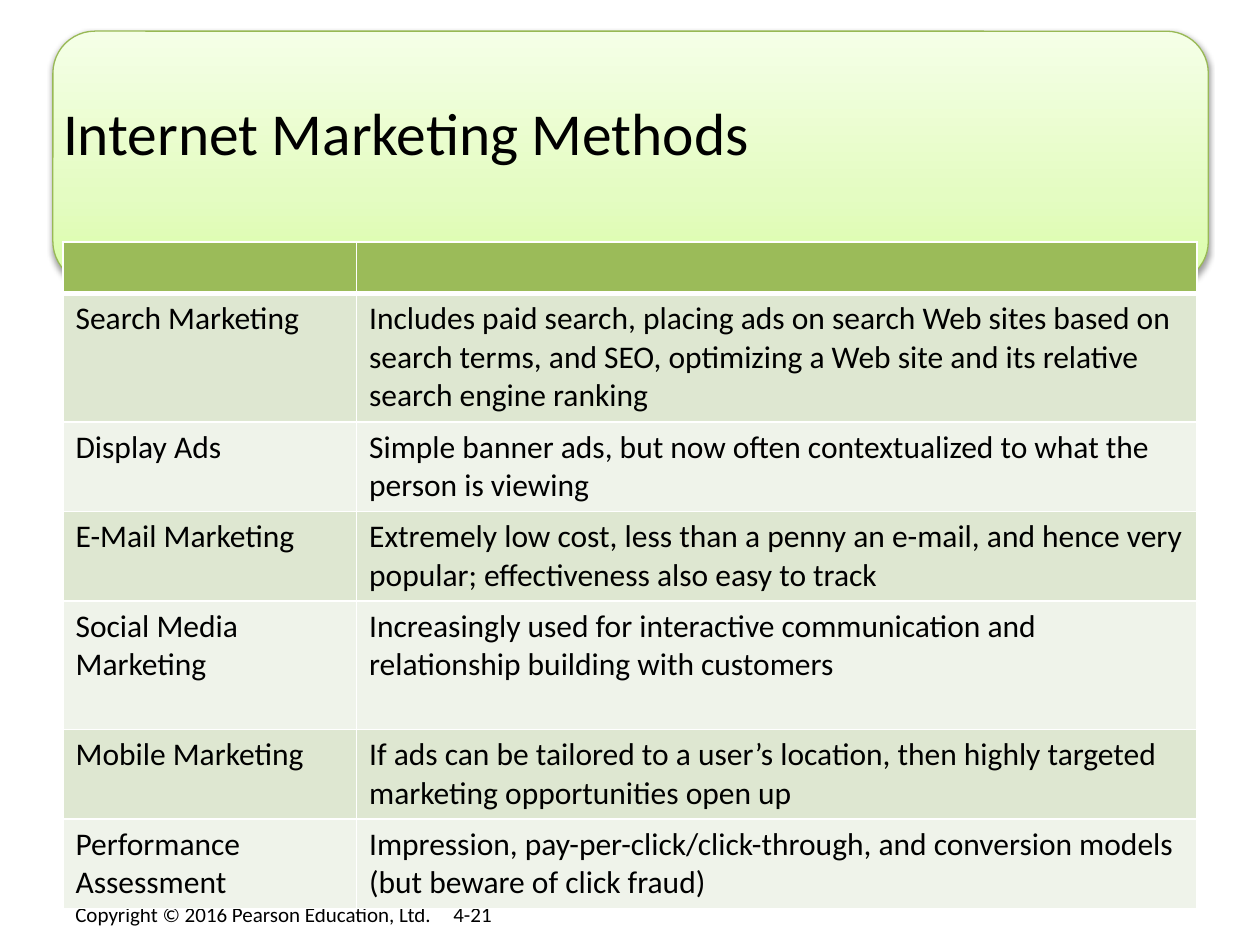
from lxml.etree import SubElement
from pptx import Presentation
from pptx.dml.color import RGBColor
from pptx.enum.shapes import MSO_SHAPE as Shape
from pptx.enum.text import MSO_ANCHOR as Anchor, MSO_AUTO_SIZE as AutoSize, PP_ALIGN as Align
from pptx.oxml import parse_xml
from pptx.oxml.ns import nsdecls, qn
from pptx.util import Inches, Pt

WIDTH, HEIGHT = 10, 7.5
MARGIN, CONTENT = 0.05, 0.9  # shares of the slide width
COLORS = {
    "text": "000000", "white": "FFFFFF", "shadow": "000000",
    "panel_line": "98B955", "panel_low": "DAFDA7",
    "panel_mid": "E4FCC2", "panel_high": "F5FFE7",
    "header": "9BBB59", "odd_row": "DEE7D1", "even_row": "EFF3EA",
}
METHODS = [
    ("Search Marketing",
     "Includes paid search, placing ads on search Web sites based on search terms, "
     "and SEO, optimizing a Web site and its relative search engine ranking"),
    ("Display Ads",
     "Simple banner ads, but now often contextualized to what the person is viewing"),
    ("E-Mail Marketing",
     "Extremely low cost, less than a penny an e-mail, and hence very popular; "
     "effectiveness also easy to track"),
    ("Social Media Marketing",
     "Increasingly used for interactive communication and relationship building "
     "with customers"),
    ("Mobile Marketing",
     "If ads can be tailored to a user’s location, then highly targeted marketing "
     "opportunities open up"),
    ("Performance Assessment",
     "Impression, pay-per-click/click-through, and conversion models "
     "(but beware of click fraud)"),
]
HEADER_HEIGHT, TWO_LINES, THREE_LINES = 0.41, 0.71, 1.02
ROW_HEIGHTS = [HEADER_HEIGHT, THREE_LINES, TWO_LINES, TWO_LINES,
               THREE_LINES, TWO_LINES, TWO_LINES]


def rgb(name):
    return RGBColor.from_string(COLORS[name])


def box(left, top, width, height):
    """Turn shares of the slide's size into lengths."""
    return (Inches(left * WIDTH), Inches(top * HEIGHT),
            Inches(width * WIDTH), Inches(height * HEIGHT))


def write(frame, text, size=18, color="text", anchor=None, inset=None, tab=None):
    frame.word_wrap = True
    if anchor is not None:
        frame.vertical_anchor = anchor
    if inset is not None:
        frame.margin_left = frame.margin_right = inset
        frame.margin_top = frame.margin_bottom = inset
    paragraph = frame.paragraphs[0]
    paragraph.alignment = Align.LEFT
    if tab:
        stops = SubElement(paragraph._p.get_or_add_pPr(), qn("a:tabLst"))
        SubElement(stops, qn("a:tab"), pos=str(Inches(tab)), algn="l")
    run = paragraph.add_run()
    run.text = text
    run.font.name, run.font.size = "Calibri", Pt(size)
    run.font.color.rgb = rgb(color)


def add_copyright(slide):
    line = slide.shapes.add_textbox(*box(MARGIN, 0.948, CONTENT, 0.04))
    write(line.text_frame, "Copyright © 2016 Pearson Education, Ltd. \t4-21",
          size=12, tab=3)


def add_title_panel(slide):
    panel = slide.shapes.add_shape(Shape.ROUNDED_RECTANGLE,
                                   *box(0.042, 0.033, 0.917, 0.267))
    panel.line.color.rgb, panel.line.width = rgb("panel_line"), Pt(0.75)
    # Gradient rising from the bottom edge, and a soft shadow below
    stops = "".join(
        f'<a:gs pos="{share * 1000}"><a:srgbClr val="{COLORS[name]}"/></a:gs>'
        for share, name in [(0, "panel_low"), (35, "panel_mid"), (100, "panel_high")])
    gradient = parse_xml(
        f'<a:gradFill {nsdecls("a")} rotWithShape="1"><a:gsLst>{stops}</a:gsLst>'
        '<a:lin ang="16200000" scaled="0"/></a:gradFill>')
    shadow = parse_xml(
        f'<a:effectLst {nsdecls("a")}><a:outerShdw blurRad="{Pt(3.1)}" '
        f'dist="{Pt(1.6)}" dir="5400000" rotWithShape="0">'
        f'<a:srgbClr val="{COLORS["shadow"]}"><a:alpha val="38000"/></a:srgbClr>'
        '</a:outerShdw></a:effectLst>')
    outline = panel.line._get_or_add_ln()
    outline.addprevious(gradient)
    outline.addnext(shadow)


def add_title(slide, text):
    title = slide.shapes.title
    title.left, title.top, title.width, title.height = box(MARGIN, 0.044, CONTENT, 0.19)
    write(title.text_frame, text, size=34, anchor=Anchor.MIDDLE, inset=0)
    title.text_frame.auto_size = AutoSize.NONE
    slide.shapes._spTree.append(title._element)  # in front of the panel


def format_cell(cell, fill, top=1, bottom=1):
    properties = cell._tc.get_or_add_tcPr()
    for side, width in (("L", 1), ("R", 1), ("T", top), ("B", bottom)):
        properties.append(parse_xml(
            f'<a:ln{side} {nsdecls("a")} w="{Pt(width)}"><a:solidFill>'
            f'<a:srgbClr val="{COLORS["white"]}"/></a:solidFill></a:ln{side}>'))
    cell.fill.solid()
    cell.fill.fore_color.rgb = rgb(fill)


def add_methods_table(slide):
    frame = slide.shapes.add_table(len(ROW_HEIGHTS), 2,
                                   *box(MARGIN, 0.256, CONTENT, 0.7))
    table = frame.table
    table.horz_banding = False
    for column, width in zip(table.columns, (2.33, 6.67)):
        column.width = Inches(width)
    for row, height in zip(table.rows, ROW_HEIGHTS):
        row.height = Inches(height)
    for cell in table.rows[0].cells:
        format_cell(cell, "header", bottom=3)
    for number, method in enumerate(METHODS, start=1):
        for cell, text in zip(table.rows[number].cells, method):
            format_cell(cell, "odd_row" if number % 2 else "even_row",
                        top=3 if number == 1 else 1)
            write(cell.text_frame, text)


def main():
    deck = Presentation()
    deck.slide_width, deck.slide_height = Inches(WIDTH), Inches(HEIGHT)
    slide = deck.slides.add_slide(deck.slide_layouts[5])
    add_copyright(slide)
    add_title_panel(slide)
    add_title(slide, "Internet Marketing Methods")
    add_methods_table(slide)
    deck.save("out.pptx")


if __name__ == "__main__":
    main()
